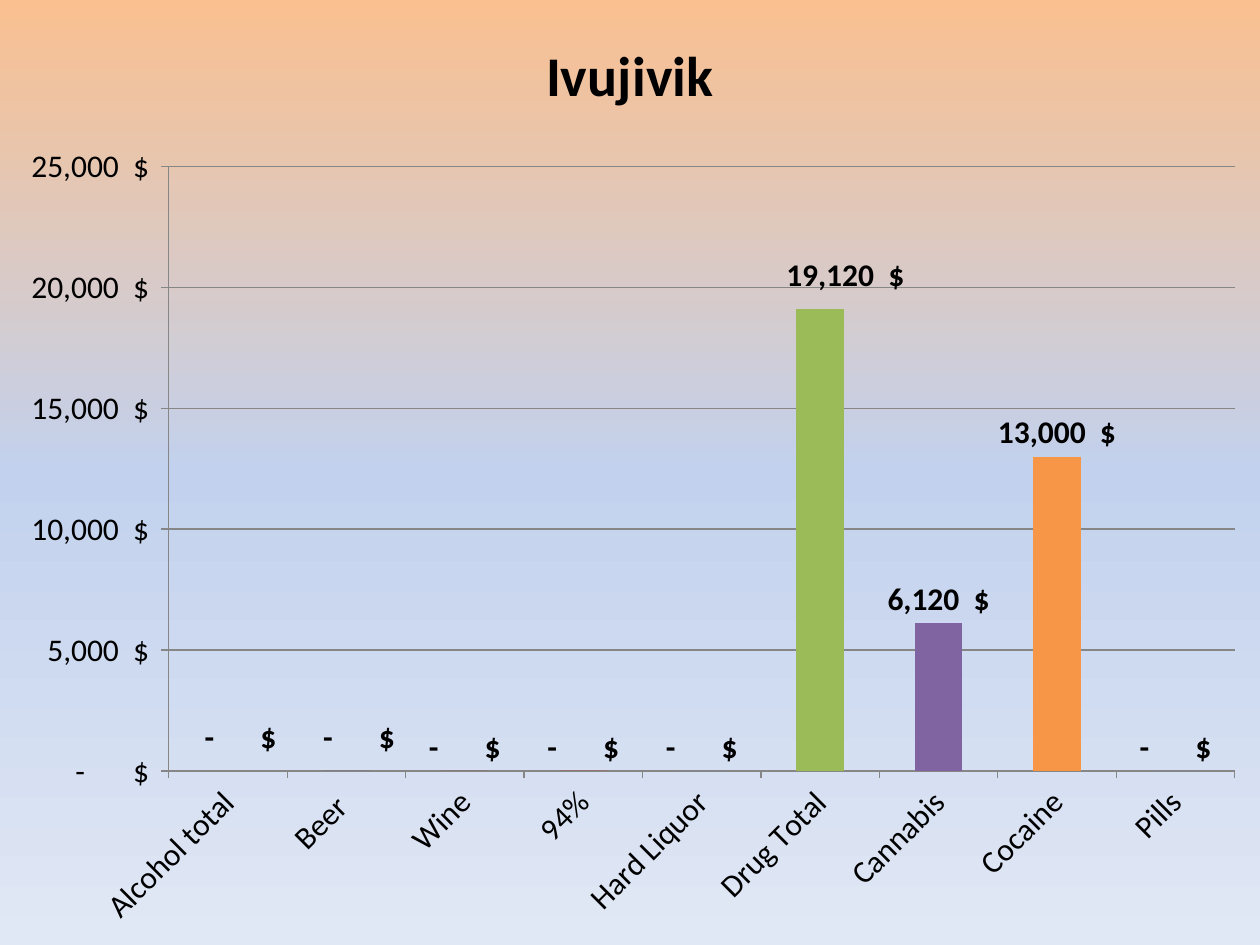
from copy import deepcopy
from dataclasses import dataclass

from lxml import etree
from pptx import Presentation
from pptx.chart.data import CategoryChartData
from pptx.dml.color import RGBColor
from pptx.enum.chart import XL_CHART_TYPE, XL_LABEL_POSITION, XL_TICK_MARK
from pptx.oxml.ns import qn
from pptx.util import Cm, Pt

COLUMN = XL_CHART_TYPE.COLUMN_CLUSTERED
OUTSIDE_END = XL_LABEL_POSITION.OUTSIDE_END
TICK_OUT = XL_TICK_MARK.OUTSIDE
TICK_NONE = XL_TICK_MARK.NONE

DOLLARS = (r'_ * #,##0_)\ "$"_ ;_ * \(#,##0\)\ "$"_ ;'
           r'_ * "-"??_)\ "$"_ ;_ @_ ')
COMMUNITY = "Ivujivik"
SEIZURES = {
    "Alcohol total": 0, "Beer ": 0, "Wine": 0, "94%": 0, "Hard Liquor": 0,
    "Drug Total": 19120, "Cannabis": 6120, "Cocaine": 13000, "Pills": 0,
}
BAR_COLOURS = {0: "948A54", 1: "604A7B", 2: "953735", 3: "FF0000",
               5: "9BBB59", 6: "8064A2", 7: "F79646"}
LABEL_SHIFTS = {0: (0.01, -0.01), 1: (0.01, -0.01), 2: (0, 0), 5: (0.02, -0.01)}


@dataclass(frozen=True)
class Theme:
    """Hold the colours and type of the slide."""
    font: str = "Calibri"
    text: str = "000000"
    bar: str = "4F81BD"
    rule: str = "868686"
    backdrop: tuple = ((0, "FAC090"), (0.5, "C2D1ED"), (1, "E1E8F5"))
    title_size: int = 32
    body_size: int = 18


THEME = Theme()


def style_font(font, size=THEME.body_size, bold=False):
    """Apply the theme's type to a font."""
    font.name = THEME.font
    font.size = Pt(size)
    font.bold = bold
    font.color.rgb = RGBColor.from_string(THEME.text)


def write_text(frame, text, **style):
    """Write one formatted run into a text frame."""
    run = frame.paragraphs[0].add_run()
    run.text = text
    style_font(run.font, **style)


def paint_backdrop(slide):
    """Fill the background with a vertical three-stop gradient."""
    fill = slide.background.fill
    fill.gradient()
    fill.gradient_angle = 270
    stops = slide.element.find(".//" + qn("a:gsLst"))
    stops.insert(1, deepcopy(stops[0]))
    for stop, (position, colour) in zip(fill.gradient_stops, THEME.backdrop):
        stop.position = position
        stop.color.rgb = RGBColor.from_string(colour)


def manual_layout(**settings):
    """Build a manual chart layout from its settings."""
    layout = etree.Element(qn("c:layout"))
    manual = etree.SubElement(layout, qn("c:manualLayout"))
    for name, value in settings.items():
        etree.SubElement(manual, qn("c:" + name)).set("val", str(value))
    return layout


def place_plot(chart):
    """Fix the inner plot area within the chart."""
    plot_area = chart.element.find(".//" + qn("c:plotArea"))
    for old in plot_area.findall(qn("c:layout")):
        plot_area.remove(old)
    plot_area.insert(0, manual_layout(
        layoutTarget="inner", xMode="edge", yMode="edge",
        x=0.134, y=0.176, w=0.846, h=0.64))


def style_line(line):
    """Give a line the thin grey rule of the chart."""
    line.width = Pt(0.75)
    line.color.rgb = RGBColor.from_string(THEME.rule)


def style_axes(chart):
    """Format both axes and the gridlines."""
    for axis in (chart.category_axis, chart.value_axis):
        axis.major_tick_mark = TICK_OUT
        axis.minor_tick_mark = TICK_NONE
        style_line(axis.format.line)
        style_font(axis.tick_labels.font)
    category_axis = chart.element.find(".//" + qn("c:catAx"))
    slant = category_axis.find(qn("c:txPr")).find(qn("a:bodyPr"))
    slant.set("rot", "-2700000")
    slant.set("vert", "horz")
    values = chart.value_axis
    values.minimum_scale, values.maximum_scale, values.major_unit = 0, 25000, 5000
    values.tick_labels.number_format = DOLLARS
    values.tick_labels.number_format_is_linked = False
    values.has_major_gridlines = True
    style_line(values.major_gridlines.format.line)


def colour_bars(series):
    """Colour the series and its individual bars."""
    series.invert_if_negative = False
    series.format.fill.solid()
    series.format.fill.fore_color.rgb = RGBColor.from_string(THEME.bar)
    for index, colour in BAR_COLOURS.items():
        fill = series.points[index].format.fill
        fill.solid()
        fill.fore_color.rgb = RGBColor.from_string(colour)


def label_bars(chart, series):
    """Show bold dollar values and shift the chosen ones."""
    labels = series.data_labels
    labels.show_value = True
    labels.number_format = DOLLARS
    labels.number_format_is_linked = False
    labels.position = OUTSIDE_END
    style_font(labels.font, bold=True)
    for index in LABEL_SHIFTS:
        label = series.points[index].data_label
        label.position = OUTSIDE_END
        style_font(label.font, bold=True)
    label_list = chart.element.find(".//" + qn("c:ser")).find(qn("c:dLbls"))
    number_format = label_list.find(qn("c:numFmt"))
    for label in label_list.findall(qn("c:dLbl")):
        index = label.find(qn("c:idx"))
        x, y = LABEL_SHIFTS[int(index.get("val"))]
        index.addnext(deepcopy(number_format))
        index.addnext(manual_layout(x=x, y=y))


def add_seizure_chart(slide, width, height):
    """Add the column chart across the whole slide."""
    data = CategoryChartData(number_format=DOLLARS)
    data.categories = list(SEIZURES)
    data.add_series(COMMUNITY, list(SEIZURES.values()))
    chart = slide.shapes.add_chart(COLUMN, Cm(0), Cm(0), width, height, data).chart
    style_font(chart.font)
    chart.has_legend = False
    chart.has_title = True
    write_text(chart.chart_title.text_frame, COMMUNITY,
               size=THEME.title_size, bold=True)
    chart.chart_title.include_in_layout = False
    plot = chart.plots[0]
    plot.gap_width = 150
    plot.vary_by_categories = False
    place_plot(chart)
    style_axes(chart)
    colour_bars(plot.series[0])
    label_bars(chart, plot.series[0])


def main():
    """Build the slide and save it."""
    deck = Presentation()
    deck.slide_width, deck.slide_height = Cm(25.4), Cm(19.05)
    slide = deck.slides.add_slide(deck.slide_layouts[6])
    paint_backdrop(slide)
    add_seizure_chart(slide, deck.slide_width, deck.slide_height)
    deck.save("out.pptx")


if __name__ == "__main__":
    main()
